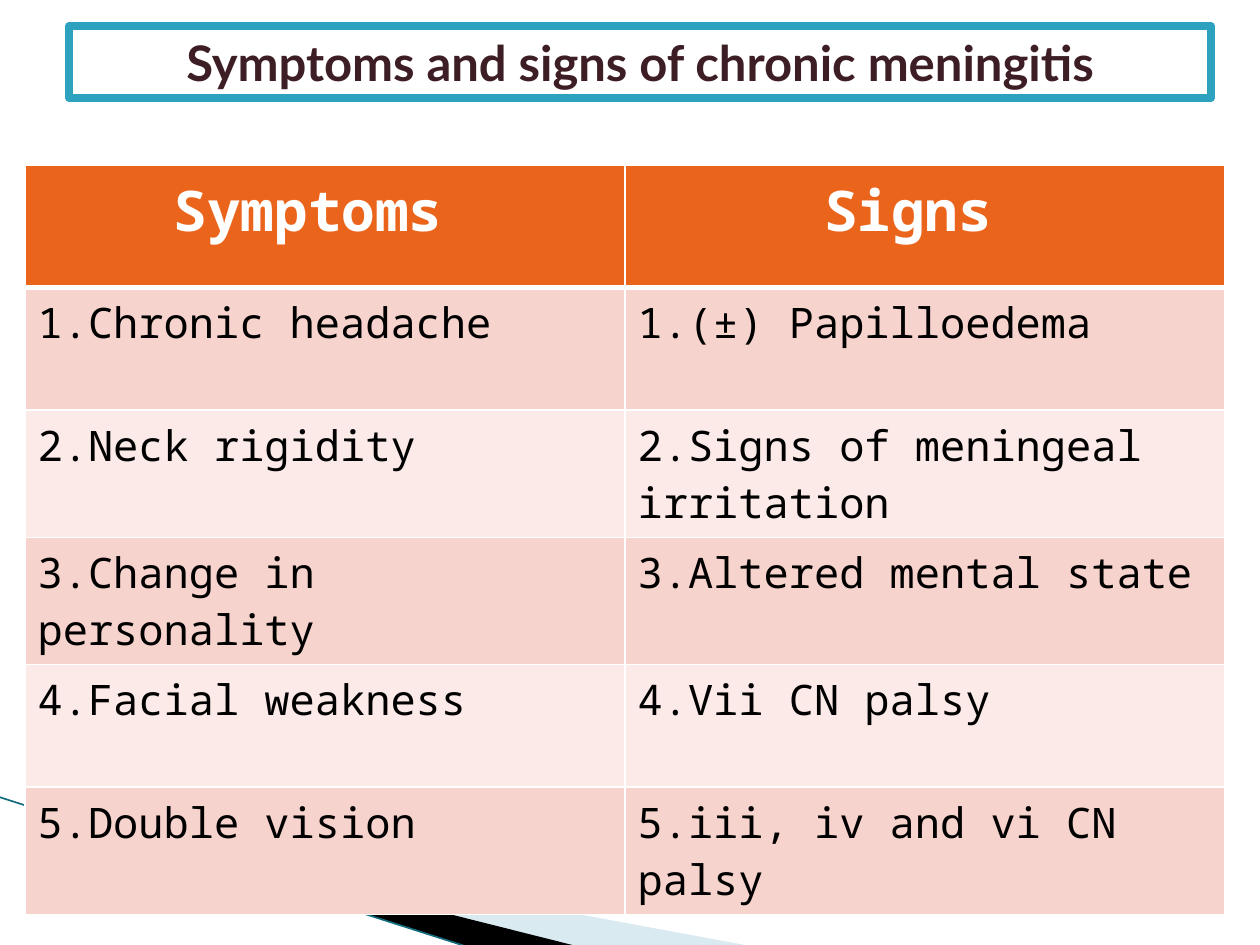
from dataclasses import dataclass

from lxml import etree
from pptx import Presentation
from pptx.dml.color import RGBColor
from pptx.enum import shapes, text
from pptx.oxml.ns import qn
from pptx.util import Emu, Pt

EMU_PER_PX = 914400 / 126

WHITE = RGBColor(0xFF, 0xFF, 0xFF)
BLACK = RGBColor(0x00, 0x00, 0x00)
PALE_BLUE = RGBColor(0xA0, 0xCB, 0xDC)
DARK_TEAL = RGBColor(0x14, 0x6C, 0x7E)
TEAL = RGBColor(0x2D, 0xA2, 0xBF)
PLUM = RGBColor(0x3E, 0x1E, 0x25)
ORANGE = RGBColor(0xEB, 0x64, 0x1B)
PINK = RGBColor(0xF7, 0xD3, 0xCD)
PALE_PINK = RGBColor(0xFB, 0xEA, 0xE8)

TITLE = "Symptoms and signs of chronic meningitis"
ROWS = [
    ("Symptoms ", "Signs "),
    ("1.Chronic headache", "1.(±) Papilloedema"),
    ("2.Neck rigidity", "2.Signs of meningeal irritation"),
    ("3.Change in personality", "3.Altered mental state"),
    ("4.Facial weakness", "4.Vii CN palsy"),
    ("5.Double vision", "5.iii, iv and vi CN palsy"),
]
TABLE_WIDTH, TABLE_HEIGHT = 1200, 735


@dataclass(frozen=True)
class Wedge:
    frame: tuple[int, int, int, int]
    points: tuple[tuple[int, int], ...]
    color: RGBColor
    opacity: int


@dataclass(frozen=True)
class CellStyle:
    fill: RGBColor
    bottom_border: int
    align: text.PP_ALIGN
    font: dict


WEDGES = [
    Wedge((98, 689, 524, 199),
          ((69, 820), (750, 946), (575, 946), (69, 819)), PALE_BLUE, 40),
    Wedge((-8, 798, 524, 116),
          ((67, 818), (576, 946), (469, 947), (68, 818)), BLACK, 100),
]
MONO = "Noto Sans Mono"
BODY_FONT = {"name": MONO, "size": Pt(24), "bold": False}
HEADER = CellStyle(ORANGE, 3, text.PP_ALIGN.CENTER,
                   {"name": MONO, "size": Pt(32), "bold": True})
BANDS = [CellStyle(color, 1, text.PP_ALIGN.LEFT, BODY_FONT)
         for color in (PINK, PALE_PINK)]


def px(length: int) -> Emu:
    return Emu(round(length * EMU_PER_PX))


def format_paragraph(paragraph, align, font: dict, color: RGBColor) -> None:
    paragraph.alignment = align
    for name, value in font.items():
        setattr(paragraph.font, name, value)
    paragraph.font.color.rgb = color


def set_frame(shape, wedge: Wedge) -> None:
    """Give the outline a frame of its own while its points stay in place."""
    left, top, width, height = wedge.frame
    for name, value in zip(("left", "top", "width", "height"), wedge.frame):
        setattr(shape, name, px(value))
    outline = next(shape._element.iter(qn("a:path")))
    outline.set("w", str(width))
    outline.set("h", str(height))
    for point, (x, y) in zip(outline.iter(qn("a:pt")), wedge.points):
        point.set("x", str(x - left))
        point.set("y", str(y - top))


def draw_wedge(slide, wedge: Wedge) -> None:
    builder = slide.shapes.build_freeform(*wedge.points[0], scale=EMU_PER_PX)
    builder.add_line_segments(wedge.points[1:], close=True)
    shape = builder.convert_to_shape()
    set_frame(shape, wedge)
    shape.shadow.inherit = False
    shape.line.fill.background()
    shape.fill.solid()
    shape.fill.fore_color.rgb = wedge.color
    if wedge.opacity < 100:
        color = shape._element.spPr.find(qn("a:solidFill"))[0]
        etree.SubElement(color, qn("a:alpha"), val=str(wedge.opacity * 1000))


def draw_edge_line(slide) -> None:
    line = slide.shapes.add_connector(
        shapes.MSO_CONNECTOR.STRAIGHT, px(-1), px(797), px(468), px(947))
    line.line.color.rgb = DARK_TEAL
    line.line.width = Pt(0.95)
    etree.SubElement(line._element.spPr, qn("a:effectLst"))


def add_borders(cell, bottom: int) -> None:
    properties = cell._tc.get_or_add_tcPr()
    for side, width in {"L": 1, "R": 1, "T": 1, "B": bottom}.items():
        border = etree.SubElement(properties, qn(f"a:ln{side}"), w=str(Pt(width)))
        fill = etree.SubElement(border, qn("a:solidFill"))
        etree.SubElement(fill, qn("a:srgbClr"), val=str(WHITE))


def fill_cell(cell, words: str, style: CellStyle, color: RGBColor) -> None:
    cell.text = words
    format_paragraph(cell.text_frame.paragraphs[0], style.align, style.font, color)
    add_borders(cell, style.bottom_border)
    cell.fill.solid()
    cell.fill.fore_color.rgb = style.fill


def draw_table(slide) -> None:
    """Add the table; its rows and columns share the size equally."""
    table = slide.shapes.add_table(
        len(ROWS), len(ROWS[0]), px(25), px(165),
        px(TABLE_WIDTH), px(TABLE_HEIGHT)).table
    for i, words in enumerate(ROWS):
        style = BANDS[(i - 1) % 2] if i else HEADER
        for j, word in enumerate(words):
            fill_cell(table.cell(i, j), word, style, BLACK if i else WHITE)


def draw_title(slide) -> None:
    shape = slide.shapes.add_shape(
        shapes.MSO_SHAPE.RECTANGLE, px(69), px(26), px(1142), px(72))
    shape.shadow.inherit = False
    shape.fill.solid()
    shape.fill.fore_color.rgb = WHITE
    shape.line.color.rgb = TEAL
    shape.line.width = Pt(4.33)
    frame = shape.text_frame
    frame.word_wrap = True
    frame.vertical_anchor = text.MSO_ANCHOR.MIDDLE
    frame.text = TITLE
    format_paragraph(frame.paragraphs[0], text.PP_ALIGN.CENTER,
                     {"name": "Lato", "size": Pt(28), "bold": True}, PLUM)


def main() -> None:
    presentation = Presentation()
    presentation.slide_width, presentation.slide_height = px(1260), px(945)
    slide = presentation.slides.add_slide(presentation.slide_layouts[6])
    for wedge in WEDGES:
        draw_wedge(slide, wedge)
    draw_edge_line(slide)
    draw_table(slide)
    draw_title(slide)
    presentation.save("out.pptx")


if __name__ == "__main__":
    main()
